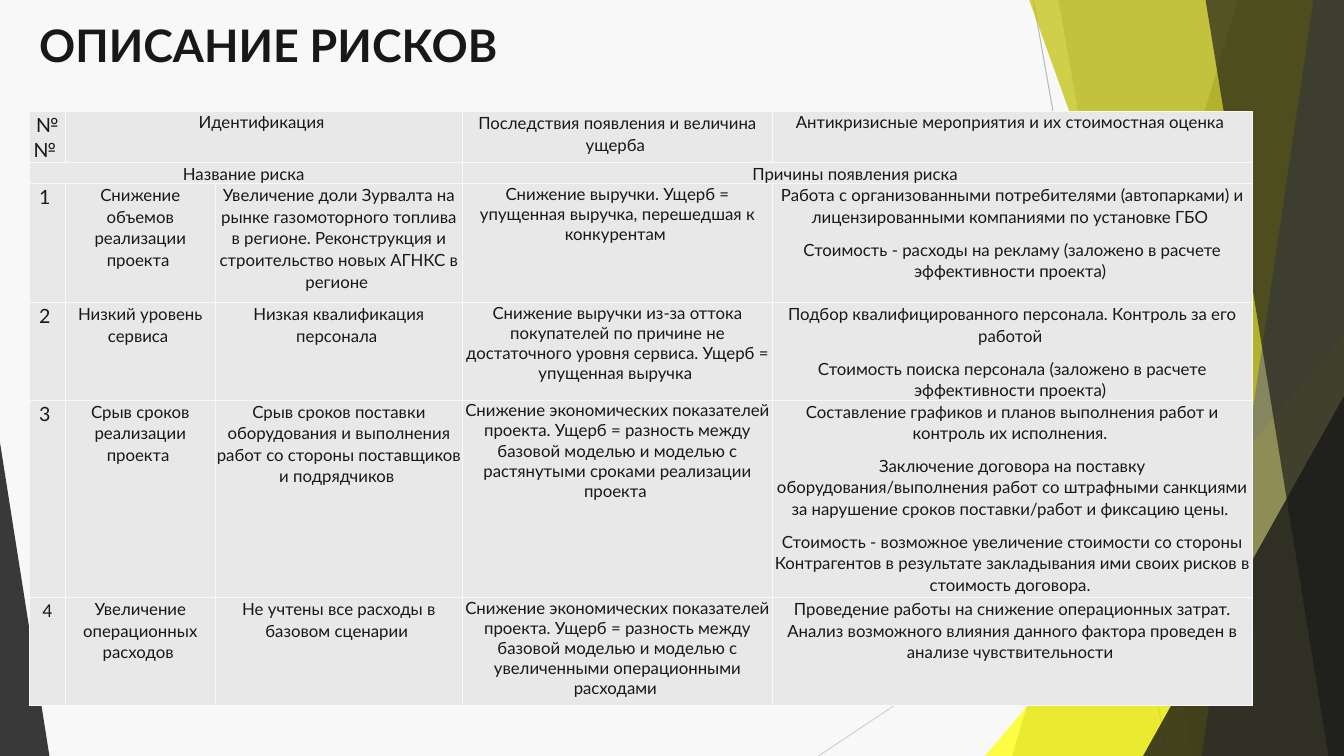
"""Build the risk table slide with its slanted side bands."""
from dataclasses import dataclass

from lxml.etree import SubElement as Sub
from pptx import Presentation as Deck
from pptx.dml.color import RGBColor as Rgb
from pptx.enum.shapes import MSO_CONNECTOR as Link, MSO_SHAPE as Kind
from pptx.enum.text import MSO_ANCHOR as Anchor, PP_ALIGN as Align
from pptx.oxml.ns import qn
from pptx.util import Inches, Pt

WIDE, HIGH = Inches(13.33), Inches(7.5)
PAPER = Rgb(0xF8, 0xF8, 0xF8)
INK = Rgb(0x18, 0x18, 0x18)
CELL = Rgb(0xE8, 0xE8, 0xE8)
LEMON = Rgb(0xFF, 0xFF, 0x00)
OLIVE = Rgb(0xBF, 0xBF, 0x00)
GREY = Rgb(0x74, 0x74, 0x74)
SILVER = Rgb(0xBA, 0xBA, 0xBA)
PALE = Rgb(0xD3, 0xD3, 0xD3)
FONT = "Lato"
INSET = Inches(0.01)


@dataclass
class Ray:
    """A thin line between two points, in percent of the slide."""
    x1: float
    y1: float
    x2: float
    y2: float
    color: Rgb


@dataclass
class Band:
    """A full-height area from a slanted edge to the right side."""
    top: float
    base: float
    color: Rgb
    alpha: int


@dataclass
class Wedge:
    """A right triangle standing on the bottom of the slide."""
    left: float
    top: float
    width: float
    tip: float
    color: Rgb
    alpha: int


@dataclass
class Box:
    """A table cell; each item of text is a paragraph."""
    text: tuple[str, ...]
    size: int = 12
    loose: bool = True
    span: int = 1
    font: str = FONT


DECOR = [
    Ray(76.88, 0, 86.85, 100, SILVER),
    Ray(100, 53.73, 60.9, 100, PALE),
    Band(92.1, 75.3, INK, 30),
    Band(78.75, 88.73, INK, 20),
    Wedge(73.28, 44.4, 26.72, 1, LEMON, 72),
    Band(76.58, 96.83, OLIVE, 70),
    Band(97.73, 89.4, GREY, 70),
    Band(89.7, 98.85, INK, 65),
    Wedge(85.05, 52.4, 14.95, 1, INK, 80),
    Wedge(0, 58.53, 3.68, 0, INK, 85),
]
COLS = [2.67, 11.18, 18.38, 23.08, 35.68]
ROWS = [5.87, 2.53, 15.73, 11.6, 26.13, 14.27]


def risk(num: Box, name: str, cause: str, harm: str, *steps: str) -> list[Box]:
    """Return one body row; the harm column has tight lines."""
    return [num, Box((name,)), Box((cause,)), Box((harm,), loose=False), Box(steps)]


GRID = [
    [Box(("№№ ",), 14),
     Box(("Идентификация ",), loose=False, span=2),
     Box(("Последствия появления и величина ущерба ",)),
     Box(("Антикризисные мероприятия и их стоимостная оценка ",), loose=False)],
    [Box(("Название риска ",), span=3), Box(("Причины появления риска ",), span=2)],
    risk(Box(("1 ",), 14),
         "Снижение объемов реализации проекта ",
         "Увеличение доли Зурвалта на рынке газомоторного топлива в регионе. "
         "Реконструкция и строительство новых АГНКС в регионе ",
         "Снижение выручки. Ущерб = упущенная выручка, перешедшая к конкурентам ",
         "Работа с организованными потребителями (автопарками) и "
         "лицензированными компаниями по установке ГБО ",
         "Стоимость - расходы на рекламу (заложено в расчете эффективности проекта) "),
    risk(Box(("2 ",), 14),
         "Низкий уровень сервиса ",
         "Низкая квалификация персонала ",
         "Снижение выручки из-за оттока покупателей по причине не достаточного "
         "уровня сервиса. Ущерб = упущенная выручка ",
         "Подбор квалифицированного персонала. Контроль за его работой ",
         "Стоимость поиска персонала (заложено в расчете эффективности проекта) "),
    risk(Box(("3 ",), 14),
         "Срыв сроков реализации проекта ",
         "Срыв сроков поставки оборудования и выполнения работ со стороны "
         "поставщиков и подрядчиков ",
         "Снижение экономических показателей проекта. Ущерб = разность между "
         "базовой моделью и моделью с растянутыми сроками реализации проекта ",
         "Составление графиков и планов выполнения работ и контроль их исполнения. ",
         "Заключение договора на поставку оборудования/выполнения работ со штрафными "
         "санкциями за нарушение сроков поставки/работ и фиксацию цены. ",
         "Стоимость - возможное увеличение стоимости со стороны Контрагентов в "
         "результате закладывания ими своих рисков в стоимость договора. "),
    risk(Box(("4",), 14, font="Calibri"),
         "Увеличение операционных расходов ",
         "Не учтены все расходы в базовом сценарии ",
         "Снижение экономических показателей проекта. Ущерб = разность между "
         "базовой моделью и моделью с увеличенными операционными расходами ",
         "Проведение работы на снижение операционных затрат. Анализ возможного "
         "влияния данного фактора проведен в анализе чувствительности "),
]


def across(part: float) -> int:
    """Turn percent of the slide width into a length."""
    return round(WIDE * part / 100)


def down(part: float) -> int:
    """Turn percent of the slide height into a length."""
    return round(HIGH * part / 100)


def write(para, text: str, size: int, font: str, bold: bool = False) -> None:
    """Add one run to a paragraph."""
    run = para.add_run()
    run.text = text
    run.font.size, run.font.name, run.font.bold = Pt(size), font, bold
    run.font.color.rgb = INK


def trace(slide, ray: Ray) -> None:
    """Draw a thin line."""
    line = slide.shapes.add_connector(
        Link.STRAIGHT, across(ray.x1), down(ray.y1), across(ray.x2), down(ray.y2))
    line.line.color.rgb, line.line.width = ray.color, Pt(0.75)
    Sub(line._element.spPr, qn("a:effectLst"))


def paint(slide, item: Band | Wedge) -> None:
    """Draw a see-through band or wedge."""
    if isinstance(item, Band):
        pen = slide.shapes.build_freeform(across(item.top), 0)
        pen.add_line_segments([(WIDE, 0), (WIDE, HIGH), (across(item.base), HIGH)])
        shape = pen.convert_to_shape()
    else:
        shape = slide.shapes.add_shape(
            Kind.ISOSCELES_TRIANGLE, across(item.left), down(item.top),
            across(item.width), down(100 - item.top))
        shape.adjustments[0] = item.tip
    shape.shadow.inherit = False
    shape.line.fill.background()
    shape.fill.solid()
    shape.fill.fore_color.rgb = item.color
    tint = shape._element.spPr.find(".//" + qn("a:srgbClr"))
    Sub(tint, qn("a:alpha"), val=str(item.alpha * 1000))


def dress(cell) -> None:
    """Give a cell its borders, fill and insets."""
    props = cell._tc.get_or_add_tcPr()
    for side in ("lnL", "lnR", "lnT", "lnB"):
        edge = Sub(props, qn(f"a:{side}"), w=str(Pt(1)))
        Sub(Sub(edge, qn("a:solidFill")), qn("a:srgbClr"), val=str(PAPER))
    cell.fill.solid()
    cell.fill.fore_color.rgb = CELL
    cell.margin_left = cell.margin_right = INSET
    cell.margin_top = cell.margin_bottom = 0


def fill(cell, box: Box) -> None:
    """Write the paragraphs of a cell."""
    frame = cell.text_frame
    for i, text in enumerate(box.text):
        para = frame.add_paragraph() if i else frame.paragraphs[0]
        para.alignment = Align.CENTER
        if box.loose:
            para.line_spacing, para.space_after = 1.07, Pt(8)
        write(para, text, box.size, box.font)


def chart_risks(slide) -> None:
    """Draw the table of risks."""
    table = slide.shapes.add_table(
        len(ROWS), len(COLS), across(2.18), down(14.8),
        across(sum(COLS)), down(sum(ROWS))).table
    table.first_row = table.horz_banding = False
    for col, part in zip(table.columns, COLS):
        col.width = across(part)
    for row, part in zip(table.rows, ROWS):
        row.height = down(part)
    for cell in table.iter_cells():
        dress(cell)
    for r, boxes in enumerate(GRID):
        c = 0
        for box in boxes:
            cell = table.cell(r, c)
            if box.span > 1:
                cell.merge(table.cell(r, c + box.span - 1))
            fill(cell, box)
            c += box.span


def head(slide) -> None:
    """Write the slide title."""
    frame = slide.shapes.add_textbox(
        across(2.18), down(1.73), across(76.07), down(13.07)).text_frame
    frame.word_wrap, frame.vertical_anchor = True, Anchor.TOP
    write(frame.paragraphs[0], "ОПИСАНИЕ РИСКОВ", 32, FONT, True)


def main() -> None:
    """Build and save the deck."""
    deck = Deck()
    deck.slide_width, deck.slide_height = WIDE, HIGH
    slide = deck.slides.add_slide(deck.slide_layouts[6])
    slide.background.fill.solid()
    slide.background.fill.fore_color.rgb = PAPER
    for item in DECOR:
        (trace if isinstance(item, Ray) else paint)(slide, item)
    head(slide)
    chart_risks(slide)
    deck.save("out.pptx")


if __name__ == "__main__":
    main()
